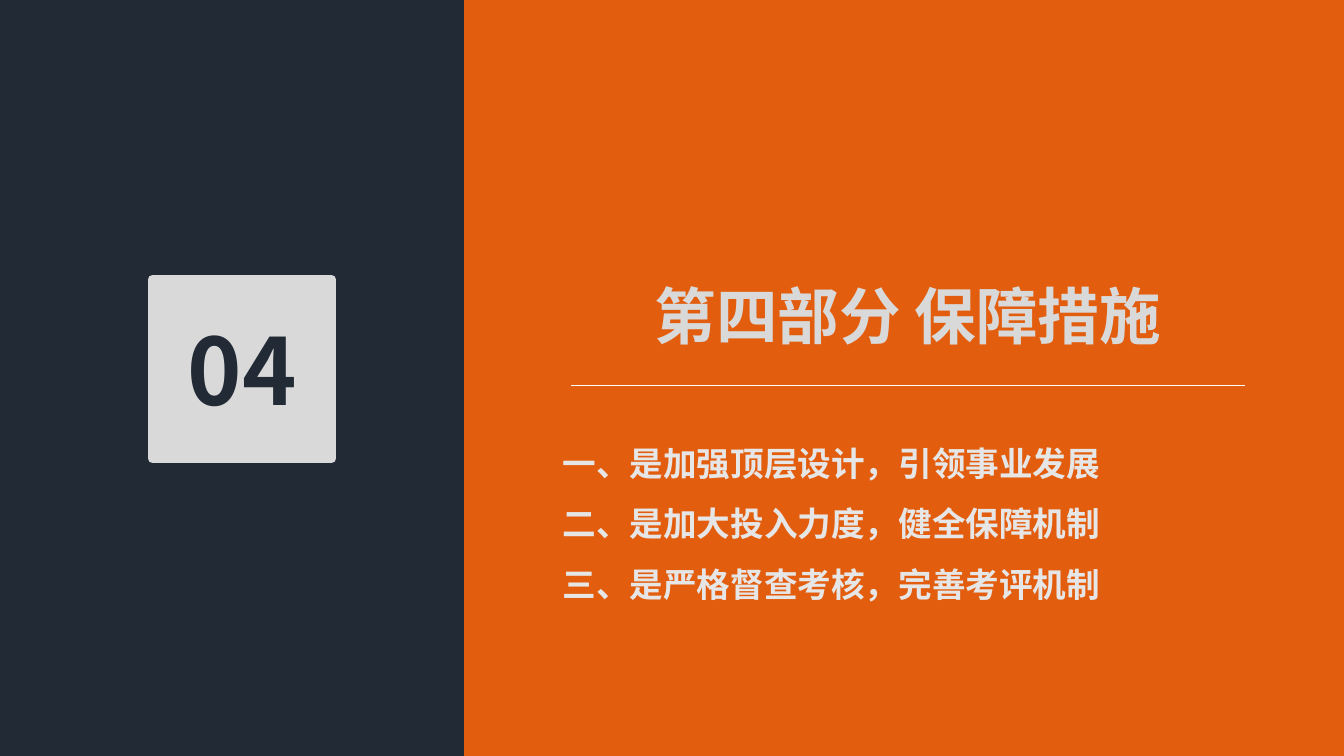
import pptx
import pptx.util
import pptx.dml.color
import pptx.enum.shapes
import pptx.enum.text
import pptx.oxml.ns
import lxml.etree

Cm = pptx.util.Cm
Pt = pptx.util.Pt
RGBColor = pptx.dml.color.RGBColor
PP_ALIGN = pptx.enum.text.PP_ALIGN
MSO_ANCHOR = pptx.enum.text.MSO_ANCHOR
MSO_SHAPE = pptx.enum.shapes.MSO_SHAPE
qn = pptx.oxml.ns.qn

NAVY = RGBColor(0x22, 0x2A, 0x35)
ORANGE = RGBColor(0xE2, 0x5E, 0x0E)
GREY = RGBColor(0xD9, 0xD9, 0xD9)
PALE = RGBColor(0xE7, 0xE6, 0xE6)
WHITE = RGBColor(0xFF, 0xFF, 0xFF)
FONT = "Noto Sans CJK SC"


def write_text(shape, text, size, color, align=PP_ALIGN.LEFT,
               anchor=MSO_ANCHOR.MIDDLE, spacing=1.0, wrap=True):
    frame = shape.text_frame
    frame.text = text
    frame.word_wrap = wrap
    frame.auto_size = pptx.enum.text.MSO_AUTO_SIZE.NONE
    frame.vertical_anchor = anchor
    for paragraph in frame.paragraphs:
        paragraph.alignment = align
        paragraph.line_spacing = spacing
        paragraph.space_before = Pt(0)
        properties = paragraph._p.get_or_add_pPr()
        properties.set("marL", "0")
        properties.set("indent", "0")
        lxml.etree.SubElement(properties, qn("a:buNone"))
        font = paragraph.runs[0].font
        font.name = FONT
        font.size = Pt(size)
        font.bold = True
        font.color.rgb = color
        east_asian = lxml.etree.SubElement(paragraph.runs[0]._r.rPr, qn("a:ea"))
        east_asian.set("typeface", FONT)


presentation = pptx.Presentation()
presentation.slide_width = Cm(33.87)
presentation.slide_height = Cm(19.05)
slide = presentation.slides.add_slide(presentation.slide_layouts[1])
slide.background.fill.solid()
slide.background.fill.fore_color.rgb = NAVY

for width, color in ((33.87, ORANGE), (11.69, NAVY)):
    panel = slide.shapes.add_shape(MSO_SHAPE.RECTANGLE, 0, 0, Cm(width), Cm(19.05))
    panel.shadow.inherit = False
    panel.fill.solid()
    panel.fill.fore_color.rgb = color
    panel.line.fill.background()

title, body = slide.placeholders
boxes = ((title, 16.13, 6.88, 13.51, 2.13), (body, 13.92, 10.52, 16.51, 4.7))
for placeholder, left, top, width, height in boxes:
    placeholder.left, placeholder.top = Cm(left), Cm(top)
    placeholder.width, placeholder.height = Cm(width), Cm(height)
    placeholder.element.getparent().append(placeholder.element)

write_text(title, "第四部分 保障措施", 44, GREY, align=PP_ALIGN.CENTER, wrap=False)
measures = (
    "一、是加强顶层设计，引领事业发展",
    "二、是加大投入力度，健全保障机制",
    "三、是严格督查考核，完善考评机制",
)
write_text(body, "\n".join(measures), 24, PALE, anchor=MSO_ANCHOR.TOP, spacing=1.5)

divider = slide.shapes.add_connector(
    pptx.enum.shapes.MSO_CONNECTOR.STRAIGHT, Cm(14.4), Cm(9.72), Cm(31.37), Cm(9.72))
divider.line.color.rgb = WHITE
divider.line.width = Pt(0.5)
lxml.etree.SubElement(divider.element.spPr, qn("a:effectLst"))

number = slide.shapes.add_shape(MSO_SHAPE.RECTANGLE, Cm(3.84), Cm(7.04), Cm(4.52), Cm(4.52))
number.shadow.inherit = False
number.fill.solid()
number.fill.fore_color.rgb = GREY
number.line.color.rgb = GREY
number.line.width = Pt(6)
write_text(number, "04", 66, NAVY, align=PP_ALIGN.CENTER)

presentation.save("out.pptx")
